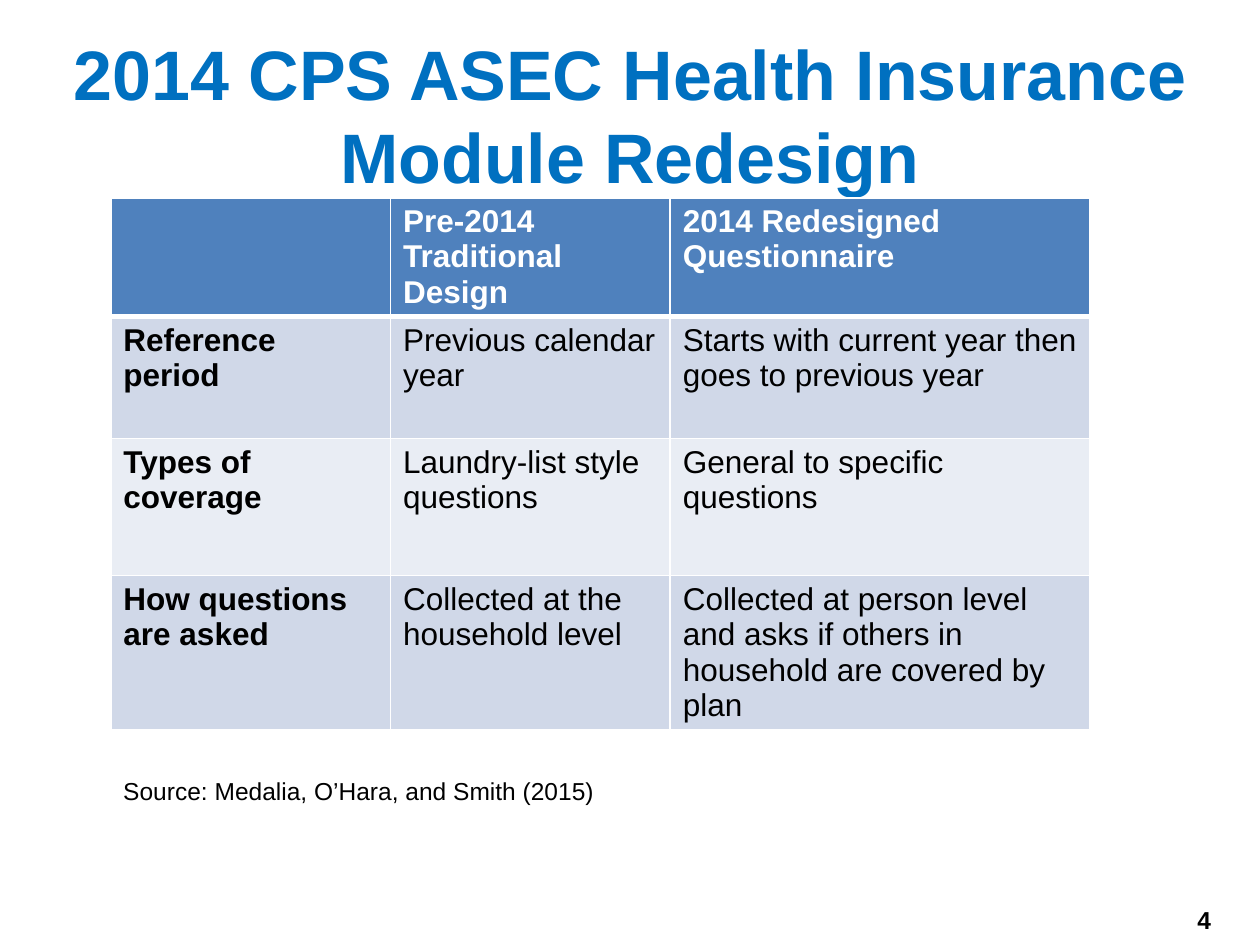
from dataclasses import dataclass

from lxml.etree import SubElement
from pptx import Presentation
from pptx.dml.color import RGBColor
from pptx.enum.text import MSO_ANCHOR as Anchor, MSO_AUTO_SIZE as AutoSize, PP_ALIGN as Align
from pptx.oxml.ns import qn
from pptx.util import Inches, Pt


@dataclass(frozen=True)
class Theme:
    font: str = "Arial"
    title: str = "0070C0"
    text: str = "000000"
    white: str = "FFFFFF"
    header: str = "4F81BD"
    bands: tuple = ("D0D8E8", "E9EDF4")
    title_size: int = 40
    table_size: int = 18
    note_size: int = 14
    thin: int = 1
    thick: int = 3


class SlideBuilder:
    """Places elements on a page; lengths are percentages of its size."""

    def __init__(self, deck, theme):
        self.deck, self.theme = deck, theme
        self.page = deck.slides.add_slide(deck.slide_layouts[6])

    def across(self, share):
        return round(self.deck.slide_width * share / 100)

    def down(self, share):
        return round(self.deck.slide_height * share / 100)

    def style(self, frame, size, color, bold=False, align=Align.LEFT):
        for para in frame.paragraphs:
            para.alignment = align
            for span in para.runs:
                font = span.font
                font.name, font.size, font.bold = self.theme.font, Pt(size), bold
                font.color.rgb = RGBColor.from_string(color)

    def text(self, text, place, size, color, bold=False, align=Align.LEFT,
             anchor=Anchor.MIDDLE, wrap=True):
        left, top, width, height = place
        box = self.page.shapes.add_textbox(self.across(left), self.down(top),
                                           self.across(width), self.down(height))
        frame = box.text_frame
        frame.text = text
        frame.word_wrap = wrap
        frame.vertical_anchor = anchor
        frame.auto_size = AutoSize.NONE if wrap else AutoSize.SHAPE_TO_FIT_TEXT
        self.style(frame, size, color, bold, align)

    def border(self, cell, side, width):
        line = SubElement(cell._tc.get_or_add_tcPr(), qn(f"a:ln{side}"), w=str(Pt(width)))
        fill = SubElement(line, qn("a:solidFill"))
        SubElement(fill, qn("a:srgbClr"), val=self.theme.white)

    def table(self, rows, left, top, widths, heights):
        theme = self.theme
        table = self.page.shapes.add_table(
            len(rows), len(widths), self.across(left), self.down(top),
            self.across(sum(widths)), self.down(sum(heights))).table
        for column, width in zip(table.columns, widths):
            column.width = self.across(width)
        for row, height in zip(table.rows, heights):
            row.height = self.down(height)

        for r, texts in enumerate(rows):
            is_header = r == 0
            fill = theme.header if is_header else theme.bands[(r - 1) % 2]
            color = theme.white if is_header else theme.text
            # The thick rule lies between the header and the first row
            edges = {"L": theme.thin, "R": theme.thin,
                     "T": theme.thick if r == 1 else theme.thin,
                     "B": theme.thick if is_header else theme.thin}
            for c, text in enumerate(texts):
                cell = table.cell(r, c)
                for side, width in edges.items():
                    self.border(cell, side, width)
                cell.fill.solid()
                cell.fill.fore_color.rgb = RGBColor.from_string(fill)
                if text:
                    cell.text_frame.text = text
                    self.style(cell.text_frame, theme.table_size, color,
                               bold=is_header or c == 0)


REDESIGN = [
    ("", "Pre-2014 Traditional Design", "2014 Redesigned Questionnaire"),
    ("Reference period", "Previous calendar year",
     "Starts with current year then goes to previous year"),
    ("Types of coverage", "Laundry-list style questions", "General to specific questions"),
    ("How questions are asked", "Collected at the household level",
     "Collected at person level and asks if others in household are covered by plan"),
]


def main():
    deck = Presentation()
    deck.slide_width, deck.slide_height = Inches(10), Inches(7.5)
    theme = Theme()
    slide = SlideBuilder(deck, theme)

    # Title
    slide.text("2014 CPS ASEC Health Insurance Module Redesign", (0, 5.87, 100, 12.4),
               theme.title_size, theme.title, bold=True, align=Align.CENTER)

    # Slide number
    slide.text("4", (73.8, 94.67, 23.3, 5.33), theme.note_size, theme.text,
               bold=True, align=Align.RIGHT)

    # Comparison of the two designs
    slide.table(REDESIGN, left=8.8, top=20.93, widths=(22.2, 22.2, 33.3),
                heights=(12.5, 12.93, 14.53, 16.2))

    # Source
    slide.text("Source: Medalia, O’Hara, and Smith (2015)", (8.8, 81.47, 39.6, 4.53),
               theme.note_size, theme.text, anchor=Anchor.TOP, wrap=False)

    deck.save("out.pptx")


if __name__ == "__main__":
    main()
